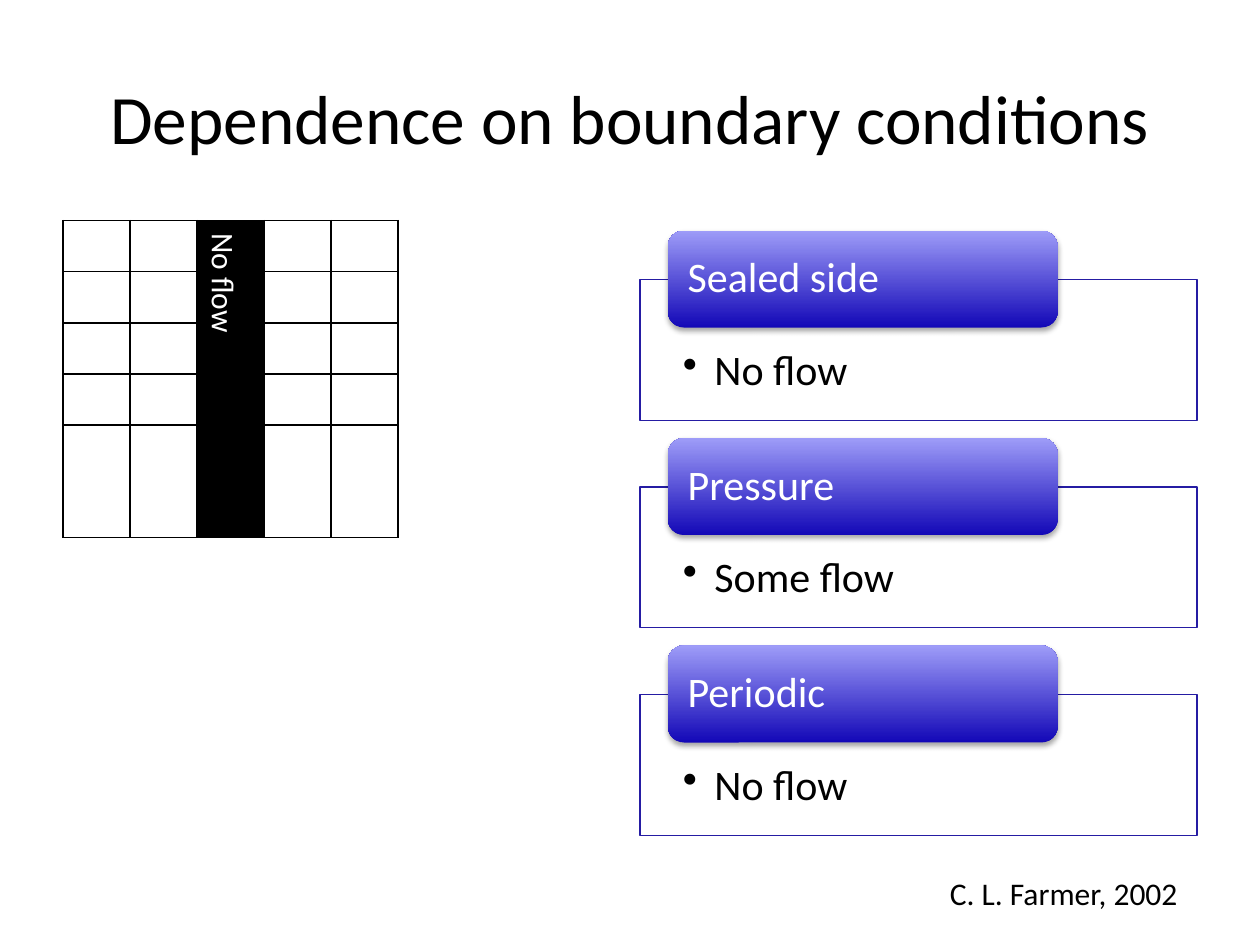
import pptx
import pptx.util
import pptx.dml.color
import pptx.enum.shapes
import pptx.enum.text
import pptx.oxml.ns
from dataclasses import dataclass
from lxml import etree

Inches, Pt = pptx.util.Inches, pptx.util.Pt
RGB = pptx.dml.color.RGBColor.from_string
SHAPE = pptx.enum.shapes.MSO_SHAPE
ALIGN = pptx.enum.text.PP_ALIGN
ANCHOR = pptx.enum.text.MSO_ANCHOR
qn = pptx.oxml.ns.qn


@dataclass(frozen=True)
class Theme:
    """Colours, font and type sizes of the slide."""
    font: str = "Calibri"
    black: str = "000000"
    white: str = "FFFFFF"
    outline: str = "251CA3"
    dark: str = "1308B7"
    light: str = "9E9CF8"
    title: float = 39.6
    body: float = 24
    small: float = 18


THEME = Theme()


def add_xml(parent, tag, **attrs):
    """Append a DrawingML element and return it."""
    return etree.SubElement(parent, qn(tag), {k: str(v) for k, v in attrs.items()})


def write(tf, text, size, color=THEME.black, align=ALIGN.LEFT, anchor=ANCHOR.TOP,
          insets=None, wrap=True, bullet=False, spacing=None):
    """Write one formatted paragraph into a text frame."""
    tf.word_wrap = wrap
    tf.vertical_anchor = anchor
    if insets:
        tf.margin_left, tf.margin_top, tf.margin_right, tf.margin_bottom = map(Inches, insets)
    p = tf.paragraphs[0]
    p.alignment = align
    p.line_spacing = spacing
    if bullet:
        p.level = 1
        pPr = p._p.get_or_add_pPr()
        pPr.set("marL", str(Inches(0.25)))
        pPr.set("indent", str(Inches(-0.25)))
        add_xml(pPr, "a:buChar", char="•")
    r = p.add_run()
    r.text = text
    r.font.name = THEME.font
    r.font.size = Pt(size)
    r.font.color.rgb = RGB(color)


def add_text(s, box, text, size, **fmt):
    """Place a text box."""
    write(s.shapes.add_textbox(*map(Inches, box)).text_frame, text, size, **fmt)


def add_grid(s, box, text, n=5):
    """Draw a square grid whose middle column is one black barrier."""
    tbl = s.shapes.add_table(n, n, *map(Inches, box)).table
    tbl.first_row = tbl.horz_banding = False
    for cell in tbl.iter_cells():
        tcPr = cell._tc.get_or_add_tcPr()
        for side in ("a:lnL", "a:lnR", "a:lnT", "a:lnB"):
            ln = add_xml(tcPr, side, w=Pt(1))
            add_xml(add_xml(ln, "a:solidFill"), "a:srgbClr", val=THEME.black)
        cell.fill.background()
    barrier = tbl.cell(0, n // 2)
    barrier.merge(tbl.cell(n - 1, n // 2))
    barrier.fill.solid()
    barrier.fill.fore_color.rgb = RGB(THEME.black)
    write(barrier.text_frame, text, THEME.small, color=THEME.white)
    barrier._tc.get_or_add_tcPr().set("vert", "vert")


def add_panel(s, box, heading, item):
    """Draw an outlined panel with a gradient heading over its top edge."""
    x, y, w, h = box
    tab_h = 0.77
    sp = s.shapes.add_shape(SHAPE.RECTANGLE, Inches(x), Inches(y + 0.39),
                            Inches(w), Inches(h - 0.39))
    sp.shadow.inherit = False
    sp.fill.solid()
    sp.fill.fore_color.rgb = RGB(THEME.white)
    add_xml(sp._element.spPr.find(".//" + qn("a:srgbClr")), "a:alpha", val=90000)
    sp.line.color.rgb = RGB(THEME.outline)
    sp.line.width = Pt(0.75)
    write(sp.text_frame, item, THEME.body, bullet=True, spacing=0.9,
          insets=(0.34, 0.55, 0.34, 0.19))

    tab = s.shapes.add_shape(SHAPE.ROUNDED_RECTANGLE, Inches(x + 0.22), Inches(y),
                             Inches(w * 0.7), Inches(tab_h))
    tab.line.fill.background()
    tab.fill.gradient()
    tab.fill.gradient_angle = 90
    for stop, color in zip(tab.fill.gradient_stops, (THEME.dark, THEME.light)):
        stop.color.rgb = RGB(color)
    tab.shadow.inherit = False
    shadow = add_xml(tab._element.spPr.find(qn("a:effectLst")), "a:outerShdw",
                     blurRad=Pt(3.1), dist=Pt(1.8), dir=5400000, rotWithShape=0)
    add_xml(add_xml(shadow, "a:srgbClr", val=THEME.black), "a:alpha", val=35000)
    write(tab.text_frame, heading, THEME.body, color=THEME.white, anchor=ANCHOR.MIDDLE,
          insets=(0.12, 0, 0.12, 0), spacing=0.9)


def add_panels(s, box, panels):
    """Stack panels at an equal pitch inside the box."""
    x, y, w, h = box
    gap = 0.14
    panel_h = (h - gap * (len(panels) - 1)) / len(panels)
    for i, (heading, item) in enumerate(panels):
        add_panel(s, (x, y + i * (panel_h + gap), w, panel_h), heading, item)


def main():
    """Build the slide and save it."""
    prs = pptx.Presentation()
    prs.slide_width, prs.slide_height = Inches(10), Inches(7.5)
    s = prs.slides.add_slide(prs.slide_layouts[6])
    add_text(s, (0.5, 0.3, 9, 1.25), "Dependence on boundary conditions", THEME.title,
             align=ALIGN.CENTER, anchor=ANCHOR.MIDDLE)
    add_grid(s, (0.5, 1.75, 2.66, 2.03), "No flow")
    add_panels(s, (5.08, 1.83, 4.42, 4.8), [
        ("Sealed side", "No flow"),
        ("Pressure", "Some flow"),
        ("Periodic", "No flow"),
    ])
    add_text(s, (7.44, 6.89, 2.06, 0.4), "C. L. Farmer, 2002", THEME.small, wrap=False)
    prs.save("out.pptx")


if __name__ == "__main__":
    main()
